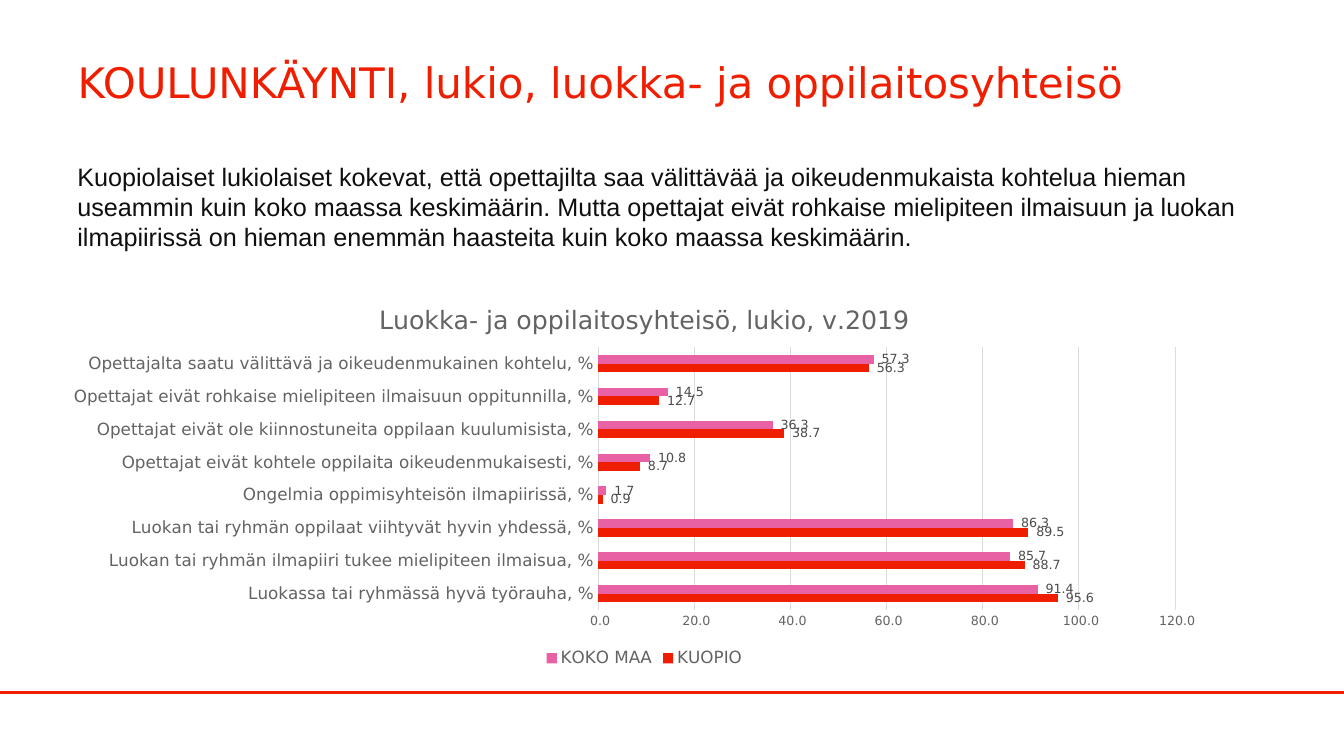
from pptx import Presentation
from pptx.chart.data import CategoryChartData
from pptx.dml.color import RGBColor
from pptx.enum.chart import XL_LABEL_POSITION as LabelPosition
from pptx.enum.chart import XL_CHART_TYPE as ChartType
from pptx.enum.chart import XL_LEGEND_POSITION as LegendPosition
from pptx.enum.chart import XL_TICK_MARK as TickMark
from pptx.enum.shapes import MSO_CONNECTOR as ConnectorType
from pptx.enum.text import MSO_ANCHOR as Anchor
from pptx.enum.text import MSO_AUTO_SIZE as AutoSize
from pptx.enum.text import PP_ALIGN as Align
from pptx.oxml import parse_xml
from pptx.oxml.ns import nsdecls, qn
from pptx.util import Cm, Pt

COLORS = {
    "red": "F01E00",
    "pink": "E961A5",
    "ink": "0F0F0F",
    "grey": "636363",
    "label": "4B4B4B",
    "grid": "DBDBDB",
}
SANS = "DejaVu Sans"
NUMBER_FORMAT = r"#\ ##0.0"
LEFT = Cm(1.7)

TITLE = "KOULUNKÄYNTI, lukio, luokka- ja oppilaitosyhteisö"
SUMMARY = (
    "Kuopiolaiset lukiolaiset kokevat, että opettajilta saa välittävää ja "
    "oikeudenmukaista kohtelua hieman useammin kuin koko maassa keskimäärin. "
    "Mutta opettajat eivät rohkaise mielipiteen ilmaisuun ja luokan "
    "ilmapiirissä on hieman enemmän haasteita kuin koko maassa keskimäärin."
)
CHART_TITLE = "Luokka- ja oppilaitosyhteisö, lukio, v.2019"

# Statement, Kuopio, whole country; listed from the bottom bar upwards
RESULTS = [
    ("Luokassa tai ryhmässä hyvä työrauha, %", 95.6, 91.4),
    ("Luokan tai ryhmän ilmapiiri tukee mielipiteen ilmaisua, %", 88.7, 85.7),
    ("Luokan tai ryhmän oppilaat viihtyvät hyvin yhdessä, %", 89.5, 86.3),
    ("Ongelmia oppimisyhteisön ilmapiirissä, %", 0.9, 1.7),
    ("Opettajat eivät kohtele oppilaita oikeudenmukaisesti, %", 8.7, 10.8),
    ("Opettajat eivät ole kiinnostuneita oppilaan kuulumisista, %", 38.7, 36.3),
    ("Opettajat eivät rohkaise mielipiteen ilmaisuun oppitunnilla, %", 12.7, 14.5),
    ("Opettajalta saatu välittävä ja oikeudenmukainen kohtelu, %", 56.3, 57.3),
]


def rgb(name):
    return RGBColor.from_string(COLORS[name])


def style_font(font, size, color, name=SANS):
    font.size = Pt(size)
    font.name = name
    font.bold = False
    font.color.rgb = rgb(color)


def write_text(frame, text, size, color, name=SANS, anchor=Anchor.TOP, align=Align.LEFT):
    frame.word_wrap = True
    frame.auto_size = AutoSize.NONE
    frame.vertical_anchor = anchor
    para = frame.paragraphs[0]
    para.alignment = align
    span = para.add_run()
    span.text = text
    style_font(span.font, size, color, name)


def style_line(line, color, width):
    line.color.rgb = rgb(color)
    line.width = Pt(width)


def add_title(page):
    title = page.shapes.title
    title.left, title.top, title.width, title.height = LEFT, Cm(0.76), Cm(30.48), Cm(2.59)
    write_text(title.text_frame, TITLE, 30, "red", anchor=Anchor.MIDDLE)


def add_summary(page):
    box = page.shapes.add_textbox(LEFT, Cm(3.94), Cm(30.45), Cm(2.57))
    write_text(box.text_frame, SUMMARY, 18, "ink", name="Arial")


def add_rule(page, top, width):
    rule = page.shapes.add_connector(ConnectorType.STRAIGHT, 0, top, width, top)
    style_line(rule.line, "red", 2)
    rule.element.spPr.append(parse_xml(f"<a:effectLst {nsdecls('a')}/>"))


def place_plot(chart, x, y, w, h):
    """Fix the inner plot area, in fractions of the chart."""
    area = chart.element.find(f".//{qn('c:plotArea')}")
    for layout in area.findall(qn("c:layout")):
        area.remove(layout)
    sizes = "".join(f'<c:{key} val="{value}"/>' for key, value in zip("xywh", (x, y, w, h)))
    area.insert(0, parse_xml(
        f"<c:layout {nsdecls('c')}><c:manualLayout>"
        '<c:layoutTarget val="inner"/><c:xMode val="edge"/><c:yMode val="edge"/>'
        f"{sizes}</c:manualLayout></c:layout>"
    ))


def style_axes(chart):
    categories, values = chart.category_axis, chart.value_axis
    for axis, size in ((categories, 12), (values, 9)):
        axis.major_tick_mark = axis.minor_tick_mark = TickMark.NONE
        style_font(axis.tick_labels.font, size, "grey")
    categories.has_major_gridlines = False
    style_line(categories.format.line, "grid", 0.75)
    values.minimum_scale, values.maximum_scale, values.major_unit = 0, 120, 20
    values.format.line.fill.background()
    style_line(values.major_gridlines.format.line, "grid", 0.75)
    values.tick_labels.number_format = NUMBER_FORMAT
    values.tick_labels.number_format_is_linked = False


def style_bars(plot):
    plot.gap_width = 182
    plot.vary_by_categories = False
    for series, color in zip(plot.series, ("red", "pink")):
        series.invert_if_negative = False
        series.format.fill.solid()
        series.format.fill.fore_color.rgb = rgb(color)
    plot.has_data_labels = True
    labels = plot.data_labels
    labels.show_value = True
    labels.position = LabelPosition.OUTSIDE_END
    labels.number_format = NUMBER_FORMAT
    labels.number_format_is_linked = False
    style_font(labels.font, 9, "label")


def add_results_chart(page):
    names, kuopio, country = zip(*RESULTS)
    data = CategoryChartData(number_format=NUMBER_FORMAT)
    data.categories = names
    data.add_series("KUOPIO", kuopio)
    data.add_series("KOKO MAA", country)
    chart = page.shapes.add_chart(
        ChartType.BAR_CLUSTERED, LEFT, Cm(7.19), Cm(29.08), Cm(9.75), data
    ).chart
    style_font(chart.font, 10, "ink")
    chart.has_title = True
    write_text(chart.chart_title.text_frame, CHART_TITLE, 18, "grey", align=Align.CENTER)
    chart.has_legend = True
    chart.legend.position = LegendPosition.BOTTOM
    chart.legend.include_in_layout = False
    style_font(chart.legend.font, 12, "grey")
    style_axes(chart)
    style_bars(chart.plots[0])
    place_plot(chart, 0.46, 0.16, 0.5, 0.68)


def main():
    deck = Presentation()
    deck.slide_width, deck.slide_height = Cm(33.87), Cm(19.05)
    page = deck.slides.add_slide(deck.slide_layouts[5])
    add_rule(page, Cm(17.45), deck.slide_width)
    add_title(page)
    add_results_chart(page)
    add_summary(page)
    deck.save("out.pptx")


if __name__ == "__main__":
    main()
